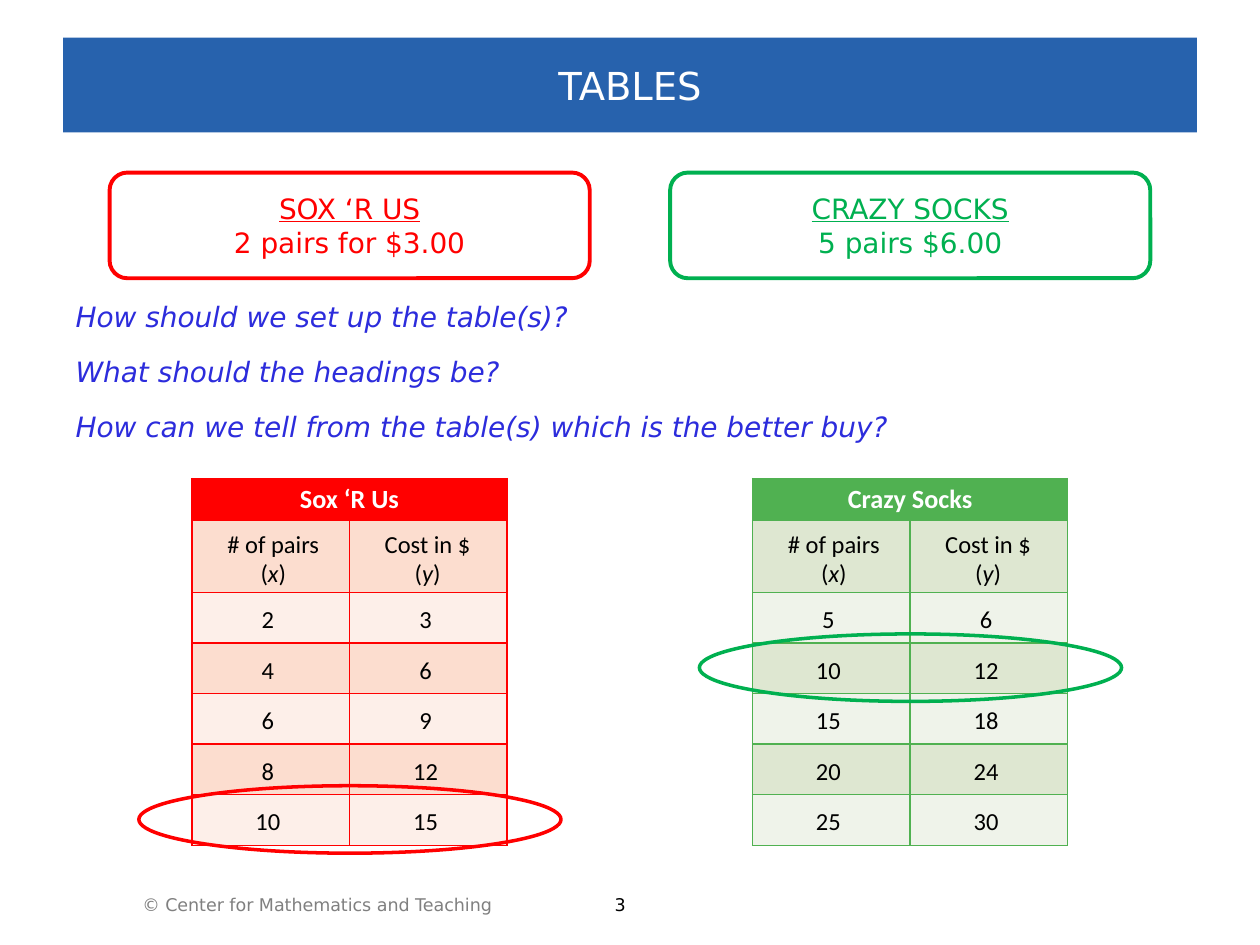
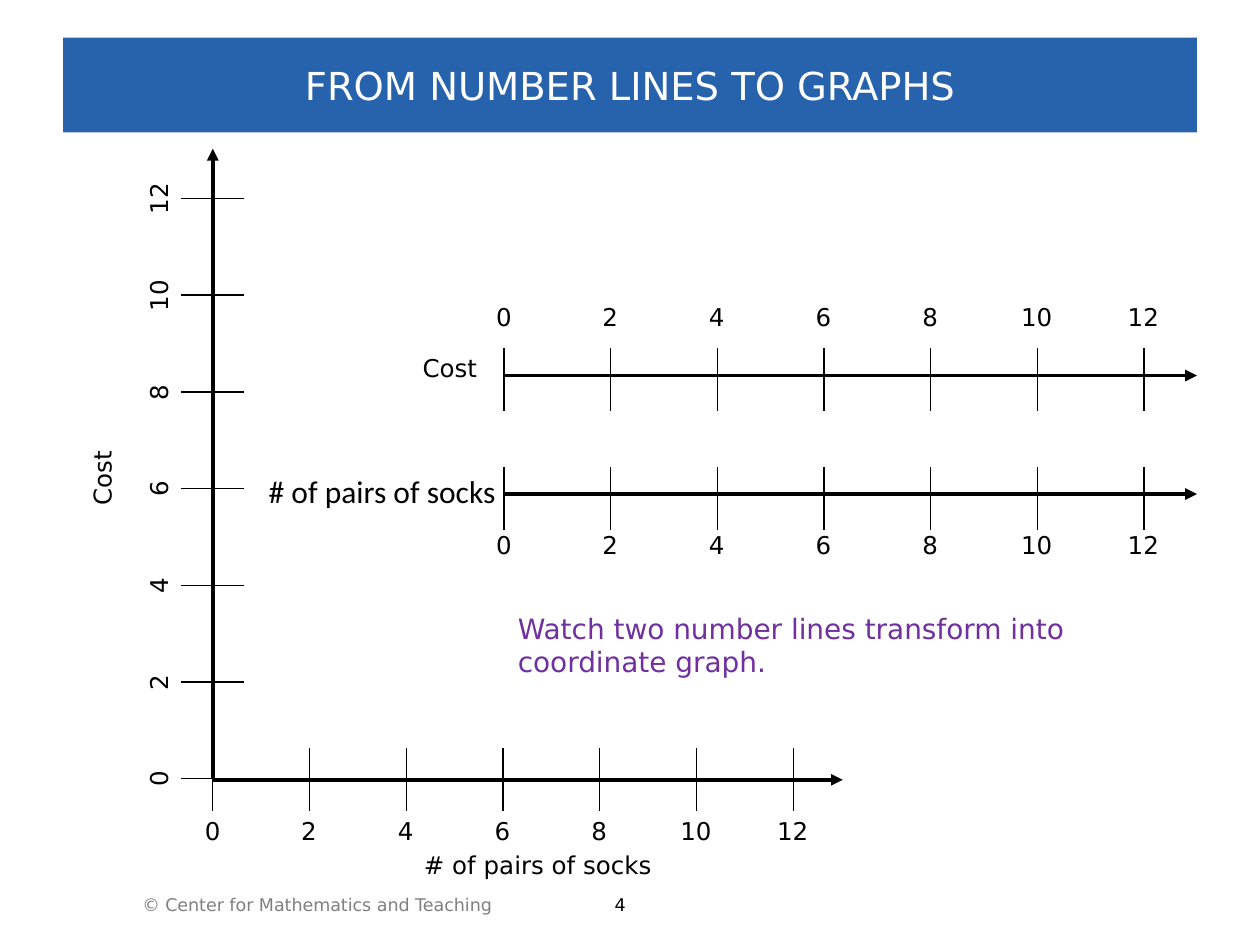
from lxml.etree import SubElement as Sub
from pptx import Presentation
from pptx.dml.color import RGBColor
from pptx.enum.shapes import MSO_CONNECTOR as Link, MSO_SHAPE as Shape
from pptx.enum.text import MSO_ANCHOR as Anchor, MSO_AUTO_SIZE as Fit, PP_ALIGN as Align
from pptx.oxml.ns import qn
from pptx.util import Cm, Pt

SANS, CALIBRI = "DejaVu Sans", "Calibri"
BAND, WHITE, BLACK, GRAY = "2762AD", "FFFFFF", "000000", "808080"
RED, GREEN, BLUE, PURPLE = "FF0000", "00B050", "2C2CDC", "7030A0"
SOCKS = "# of pairs of socks"
INSET = 0.41
HEAD, SUB, ROW = 0.84, 1.45, 1.02


def paint(target, color):
    """Set a fill, line or font to a hex colour."""
    if hasattr(target, "solid"):
        target.solid()
        target.fore_color.rgb = RGBColor.from_string(color)
    else:
        target.color.rgb = RGBColor.from_string(color)


def style(para, size, color=BLACK, face=SANS, align=None):
    """Format the runs of a paragraph."""
    para.alignment = align
    for run in para.runs:
        run.font.name, run.font.size = face, Pt(size)
        paint(run.font, color)


def place(shape, x, y, w, h):
    """Move a shape to a box given in centimetres."""
    shape.left, shape.top, shape.width, shape.height = Cm(x), Cm(y), Cm(w), Cm(h)


def write(shapes, text, x, y, w, h=0.86, size=14, wrap=True, **look):
    """Add a text box with one paragraph and return it."""
    box = shapes.add_textbox(Cm(x), Cm(y), Cm(w), Cm(h))
    box.text_frame.word_wrap = wrap
    box.text_frame.text = text
    style(box.text_frame.paragraphs[0], size, **look)
    return box


def tabbed(shapes, text, stops, x, y, w, **look):
    """Add a text box whose parts are centred on tab stops."""
    box = write(shapes, text, x, y, w, **look)
    tabs = Sub(box.text_frame.paragraphs[0]._p.get_or_add_pPr(), qn("a:tabLst"))
    for stop in stops:
        Sub(tabs, qn("a:tab"), pos=str(Cm(stop)), algn="ctr")
    return box


def outline(slide, kind, color, weight, x, y, w, h):
    """Add an unfilled shape with a coloured line."""
    shape = slide.shapes.add_shape(kind, Cm(x), Cm(y), Cm(w), Cm(h))
    shape.shadow.inherit = False
    shape.fill.background()
    paint(shape.line, color)
    shape.line.width = Pt(weight)
    return shape


def start(deck, layout, title):
    """Add a slide with its title band, footer and page number."""
    slide = deck.slides.add_slide(deck.slide_layouts[layout])
    band = slide.shapes.title
    place(band, 1.27, 0.76, 22.86, 1.91)
    paint(band.fill, BAND)
    frame = band.text_frame
    frame.text = title
    frame.vertical_anchor = Anchor.MIDDLE
    style(frame.paragraphs[0], 22, WHITE, align=Align.CENTER)
    write(slide.shapes, "© Center for Mathematics and Teaching",
          2.62, 17.9, 7.67, 0.69, 10, False, color=GRAY)
    write(slide.shapes, str(len(deck.slides) + 2), 12.14, 17.9, 1.12, 0.69, 10, False)
    return slide


def ask(slide, lines):
    """Fill the body placeholder with unbulleted questions."""
    body = slide.placeholders[1]
    place(body, 1.27, 5.92, 20.47, 3.18)
    frame = body.text_frame
    frame.text = "\n".join(lines)
    frame.auto_size = Fit.NONE
    for para in frame.paragraphs:
        props = para._p.get_or_add_pPr()
        props.set("marL", "0")
        props.set("indent", "0")
        Sub(props, qn("a:buNone"))
        para.space_before, para.space_after = Pt(0), Pt(12)
        style(para, 16, BLUE)
        para.runs[0].font.italic = True


def edge(cell, color):
    """Draw the four borders of a table cell."""
    props = cell._tc.get_or_add_tcPr()
    for side in ("a:lnL", "a:lnR", "a:lnT", "a:lnB"):
        line = Sub(props, qn(side), w=str(Pt(1)))
        Sub(Sub(line, qn("a:solidFill")), qn("a:srgbClr"), val=color)


def label(shapes, text, sign, x, y):
    """Write a column heading with its italic variable below."""
    frame = write(shapes, text, x, y, 2.9, SUB, face=CALIBRI, align=Align.CENTER).text_frame
    para = frame.add_paragraph()
    for part in ("(", sign, ")"):
        para.add_run().text = part
    style(para, 14, face=CALIBRI, align=Align.CENTER)
    para.runs[1].font.italic = True


def grid(slide, x, y, name, color, tints, count):
    """Add the banded table with its merged heading."""
    heights = [HEAD, SUB] + [ROW] * count
    table = slide.shapes.add_table(len(heights), 2, Cm(x), Cm(y), Cm(6.35),
                                   Cm(sum(heights))).table
    table.cell(0, 0).merge(table.cell(0, 1))
    for r, height in enumerate(heights):
        table.rows[r].height = Cm(height)
        for c in range(2):
            cell = table.cell(r, c)
            edge(cell, color)
            paint(cell.fill, tints[r % 2] if r else color)
            cell.margin_left = cell.margin_right = Cm(0.2)
            cell.margin_top = cell.margin_bottom = Cm(0.1)
    head = table.cell(0, 0)
    head.text = name
    para = head.text_frame.paragraphs[0]
    style(para, 15, WHITE, CALIBRI, Align.CENTER)
    para.runs[0].font.bold = True


def prices(slide, x, y, name, color, tints, pairs):
    """Lay the headings and prices over the banded table."""
    grid(slide, x, y, name, color, tints, len(pairs))
    shapes = slide.shapes
    label(shapes, "# of pairs", "x", x + 0.19, y + 0.89)
    label(shapes, "Cost in $", "y", x + 3.3, y + 0.89)
    for k, (count, cost) in enumerate(pairs):
        tabbed(shapes, f"\t{count}\t{cost}", (1.09, 4.27), x + 0.19,
               y + HEAD + SUB + 0.11 + k * ROW, 6.02, face=CALIBRI)


def shop(slide, x, name, offer, color, shade, tints, pairs, pick):
    """Place a shop's offer card, its price table and the ringed row."""
    card = outline(slide, Shape.ROUNDED_RECTANGLE, color, 2.25, x, 3.48, 9.68, 2.13)
    frame = card.text_frame
    frame.text = f"{name.upper()}\n{offer}"
    frame.vertical_anchor = Anchor.MIDDLE
    for para in frame.paragraphs:
        style(para, 16, color, align=Align.CENTER)
    frame.paragraphs[0].runs[0].font.underline = True
    left, top = x + 1.66, 9.65
    prices(slide, left, top, name, shade, tints, pairs)
    ring = top + HEAD + SUB + pick * ROW - 0.18
    outline(slide, Shape.OVAL, color, 2, left - 1.07, ring, 8.51, 1.36)


def rule(shapes, x1, y1, x2, y2, weight=0.75, arrow=False):
    """Draw a black line, with an arrowhead if asked."""
    line = shapes.add_connector(Link.STRAIGHT, Cm(x1), Cm(y1), Cm(x2), Cm(y2))
    paint(line.line, BLACK)
    line.line.width = Pt(weight)
    Sub(line._element.spPr, qn("a:effectLst"))
    if arrow:
        Sub(line.line._get_or_add_ln(), qn("a:tailEnd"), type="triangle")


def scale(shapes, x, y, w, step):
    """Add the axis numbers on evenly spaced tabs."""
    text = "\t".join(str(n) for n in range(0, 13, 2))
    return tabbed(shapes, text, [k * step + 0.15 for k in range(1, 7)], x, y, w)


def axis(slide, x, y, size, step, gap, up=False, shift=0):
    """Draw a number line from its origin, rightwards or upwards."""
    shapes = slide.shapes.add_group_shape().shapes
    half, wide = 0.635, size + INSET
    for k in range(7):
        if up:
            rule(shapes, x - half, y - k * step, x + half, y - k * step)
        else:
            rule(shapes, x + k * step, y + shift - half, x + k * step, y + shift + half)
    if up:
        rule(shapes, x, y, x, y - size, 2.25, True)
        middle = y + INSET - wide / 2
        box = scale(shapes, x + gap - wide / 2, middle - 0.43, wide, step)
        box.rotation = 270
    else:
        rule(shapes, x, y, x + size, y, 2.25, True)
        scale(shapes, x - INSET, y + gap, wide, step)


def tables(deck):
    """Build the slide that compares two price tables."""
    slide = start(deck, 1, "TABLES")
    ask(slide, ["How should we set up the table(s)?", "What should the headings be?",
                "How can we tell from the table(s) which is the better buy?"])
    shop(slide, 2.21, "Sox ‘R Us", "2 pairs for $3.00", RED, RED, ("FDEFE9", "FCDDCF"),
         [(2 * n, 3 * n) for n in range(1, 6)], 4)
    shop(slide, 13.51, "Crazy Socks", "5 pairs $6.00", GREEN, "50B151", ("EFF3EA", "DEE7D1"),
         [(5 * n, 6 * n) for n in range(1, 6)], 1)


def graphs(deck):
    """Build the slide that turns number lines into a graph."""
    slide = start(deck, 5, "FROM NUMBER LINES TO GRAPHS")
    axis(slide, 10.16, 7.57, 13.97, 2.15, -1.6, shift=0.08)
    axis(slide, 10.16, 9.96, 13.97, 2.15, 0.61, shift=0.08)
    axis(slide, 4.29, 15.7, 12.7, 1.95, -1.09, up=True)
    axis(slide, 4.29, 15.72, 12.7, 1.95, 0.61)
    shapes = slide.shapes
    write(shapes, "Cost", 7.89, 6.99, 1.98, align=Align.RIGHT)
    write(shapes, SOCKS, 4.7, 9.4, 5.54, 1.02, 18, face=CALIBRI, align=Align.RIGHT)
    write(shapes, "Cost", 1.17, 9.12, 1.78).rotation = 270
    write(shapes, SOCKS, 7.85, 17.02, 5.54, align=Align.RIGHT)
    write(shapes, "Watch two number lines transform into coordinate graph.",
          10.19, 12.2, 13.41, 1.63, 16, color=PURPLE)


def main():
    """Build and save the deck."""
    deck = Presentation()
    deck.slide_width, deck.slide_height = Cm(25.4), Cm(19.05)
    tables(deck)
    graphs(deck)
    deck.save("out.pptx")


if __name__ == "__main__":
    main()
